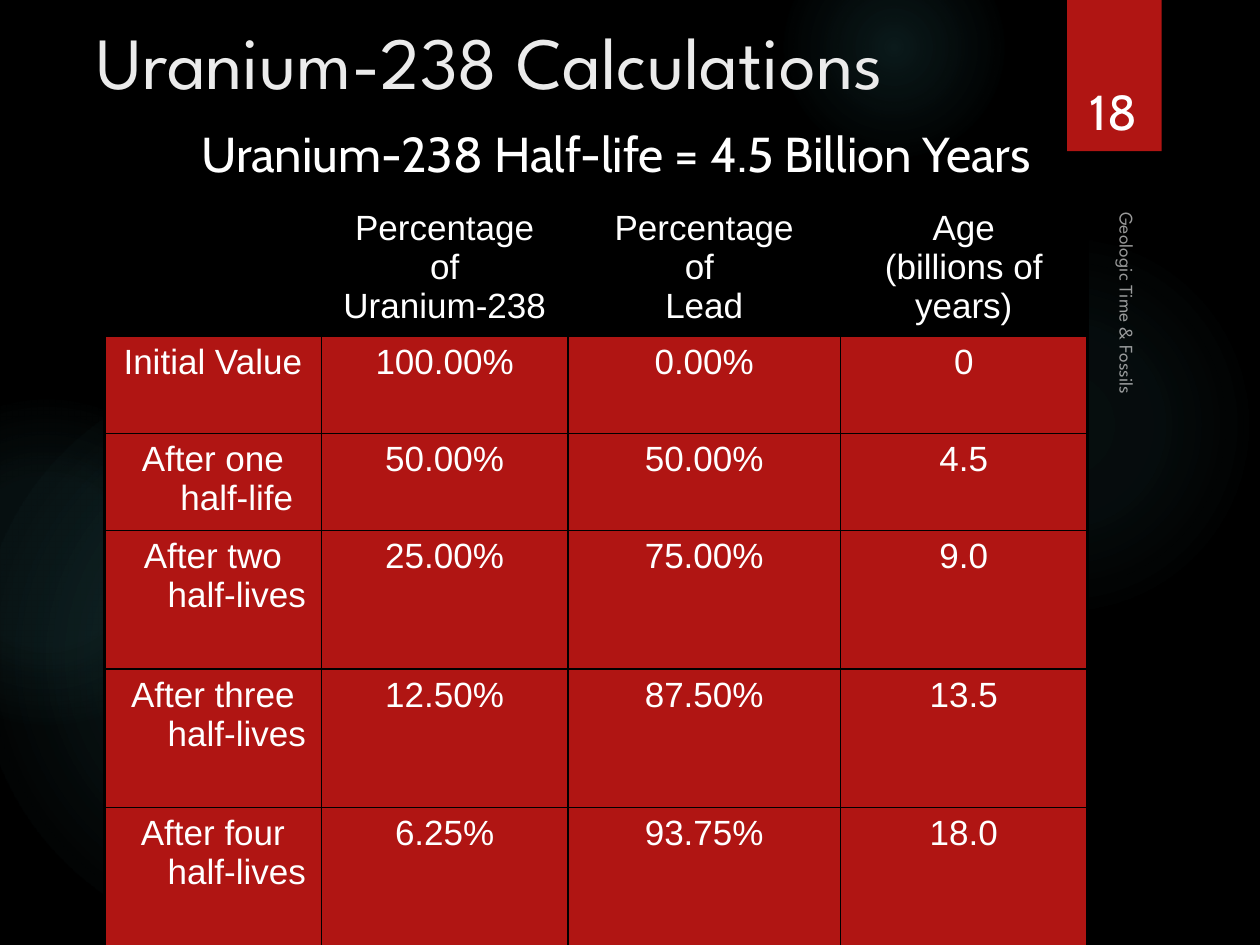
import pptx
import pptx.dml.color
import pptx.enum.shapes
import pptx.enum.text
import pptx.oxml
import pptx.oxml.ns
import pptx.util

Inches = pptx.util.Inches
Pt = pptx.util.Pt
RGBColor = pptx.dml.color.RGBColor
MSO_SHAPE = pptx.enum.shapes.MSO_SHAPE
PP_ALIGN = pptx.enum.text.PP_ALIGN
MSO_ANCHOR = pptx.enum.text.MSO_ANCHOR
qn = pptx.oxml.ns.qn
NS = pptx.oxml.ns.nsdecls("a")

BLACK = RGBColor(0x00, 0x00, 0x00)
WHITE = RGBColor(0xFF, 0xFF, 0xFF)
OFF_WHITE = RGBColor(0xEB, 0xEB, 0xEB)
RED = RGBColor(0xB0, 0x15, 0x13)
TEAL = RGBColor(0x50, 0xB9, 0xC1)

# left, top, diameter, centre alpha, alpha at 36 %, stop where the glow ends
GLOWS = [
    (6.89, 1.83, 3.08, 7, 6, 69),
    (6.22, -0.5, 1.75, 14, 7, 73),
    (6.89, 6.67, 1.08, 9, 5, 66),
    (-0.17, 2.92, 4.58, 11, 10, 75),
    (-0.92, 3.17, 2.58, 8, 8, 72),
]
COL_WIDTHS = [1.72, 1.96, 2.16, 1.96]
ROW_HEIGHTS = [1.1, 0.77, 0.77, 1.1, 1.1, 1.1]
ROWS = [
    ["", "Percentage\nof\nUranium-238", "Percentage\nof \nLead", "Age\n(billions of\nyears)"],
    ["Initial Value", "100.00%", "0.00%", "0"],
    ["After one half-life", "50.00%", "50.00%", "4.5"],
    ["After two half-lives", "25.00%", "75.00%", "9.0"],
    ["After three half-lives", "12.50%", "87.50%", "13.5"],
    ["After four half-lives", "6.25%", "93.75%", "18.0"],
]


def add_text(s, box, text, font, size, color=WHITE, align=PP_ALIGN.LEFT,
             anchor=MSO_ANCHOR.TOP):
    sp = s.shapes.add_textbox(*map(Inches, box))
    tf = sp.text_frame
    tf.word_wrap = True
    tf.vertical_anchor = anchor
    p = tf.paragraphs[0]
    p.text = text
    p.alignment = align
    p.font.name, p.font.size = font, Pt(size)
    p.font.color.rgb = color
    return sp


def add_shape(s, kind, box):
    sp = s.shapes.add_shape(kind, *map(Inches, box))
    sp.shadow.inherit = False
    sp.line.fill.background()
    return sp


def add_glow(s, box, inner, middle, end):
    """Circle that fades radially to nothing."""
    sp = add_shape(s, MSO_SHAPE.OVAL, box)
    sp.fill.background()
    stops = "".join(
        f'<a:gs pos="{pos * 1000}"><a:srgbClr val="{TEAL}">'
        f'<a:alpha val="{alpha * 1000}"/></a:srgbClr></a:gs>'
        for pos, alpha in ((0, inner), (36, middle), (end, 0)))
    grad = pptx.oxml.parse_xml(
        f'<a:gradFill {NS} rotWithShape="1"><a:gsLst>{stops}</a:gsLst><a:path path="circle">'
        '<a:fillToRect l="50000" t="50000" r="50000" b="50000"/></a:path></a:gradFill>')
    spPr = sp.fill._xPr
    spPr.replace(spPr.find(qn("a:noFill")), grad)


def set_borders(cell, widths):
    """Draw black borders; widths are left, right, top, bottom in points."""
    tcPr = cell._tc.get_or_add_tcPr()
    for i, (side, width) in enumerate(zip("LRTB", widths)):
        tcPr.insert(i, pptx.oxml.parse_xml(
            f'<a:ln{side} {NS} w="{Pt(width)}"><a:solidFill><a:srgbClr val="{BLACK}"/>'
            f'</a:solidFill></a:ln{side}>'))


def fill_cell(cell, text, header):
    cell.fill.solid()
    cell.fill.fore_color.rgb = BLACK if header else RED
    cell.vertical_anchor = MSO_ANCHOR.MIDDLE if header else MSO_ANCHOR.TOP
    cell.text = text
    for p in cell.text_frame.paragraphs:
        p.alignment = PP_ALIGN.CENTER
        p.font.name, p.font.size = "Arial", Pt(20)
        p.font.bold = False
        p.font.color.rgb = WHITE
        pPr = p._p.get_or_add_pPr()
        pPr.set("marL", str(Inches(0.38)))
        pPr.set("indent", str(-Inches(0.38)))


def add_decay_table(s, box):
    table = s.shapes.add_table(len(ROWS), len(COL_WIDTHS), *map(Inches, box)).table
    table.horz_banding = False
    for col, width in zip(table.columns, COL_WIDTHS):
        col.width = Inches(width)
    for row, height in zip(table.rows, ROW_HEIGHTS):
        row.height = Inches(height)
    last_row, last_col = len(ROWS) - 1, len(COL_WIDTHS) - 1
    for r, values in enumerate(ROWS):
        for c, text in enumerate(values):
            cell = table.cell(r, c)
            fill_cell(cell, text, header=r == 0)
            edges = (c == 0, c == last_col, r == 0, r == last_row)
            set_borders(cell, [2 if outer else 1 for outer in edges])


def add_background(s):
    s.background.fill.solid()
    s.background.fill.fore_color.rgb = BLACK
    for left, top, size, *fade in GLOWS:
        add_glow(s, (left, top, size, size), *fade)


def add_page_tab(s, box):
    left, top, width, height = box
    sp = add_shape(s, MSO_SHAPE.RECTANGLE, box)
    sp.fill.solid()
    sp.fill.fore_color.rgb = RED
    add_text(s, (left + 0.02, top + 0.32, width - 0.06, height - 0.36), "18",
             "Cabin", 28, align=PP_ALIGN.CENTER, anchor=MSO_ANCHOR.BOTTOM)


def add_side_footer(s, box):
    sp = add_text(s, box, "Geologic Time & Fossils", "League Spartan", 11,
                  anchor=MSO_ANCHOR.BOTTOM)
    sp.rotation = 90
    # 60 % opaque text
    for clr in sp._element.iter(qn("a:srgbClr")):
        clr.append(pptx.oxml.parse_xml(f'<a:alpha {NS} val="60000"/>'))


def main():
    prs = pptx.Presentation()
    prs.slide_width, prs.slide_height = Inches(10), Inches(7.5)
    s = prs.slides.add_slide(prs.slide_layouts[6])

    add_background(s)
    add_page_tab(s, (8.47, 0, 0.75, 1.2))
    # Title and subtitle
    add_text(s, (0.67, 0.02, 7.72, 0.91), "Uranium-238 Calculations",
             "League Spartan", 42, OFF_WHITE, anchor=MSO_ANCHOR.MIDDLE)
    add_decay_table(s, (0.83, 1.57, 7.8, 5.93))
    add_text(s, (1.5, 0.93, 8.3, 0.57), "Uranium-238 Half-life = 4.5 Billion Years",
             "Cabin", 28)
    add_side_footer(s, (6.82, 3.57, 4.22, 0.25))

    prs.save("out.pptx")


if __name__ == "__main__":
    main()
